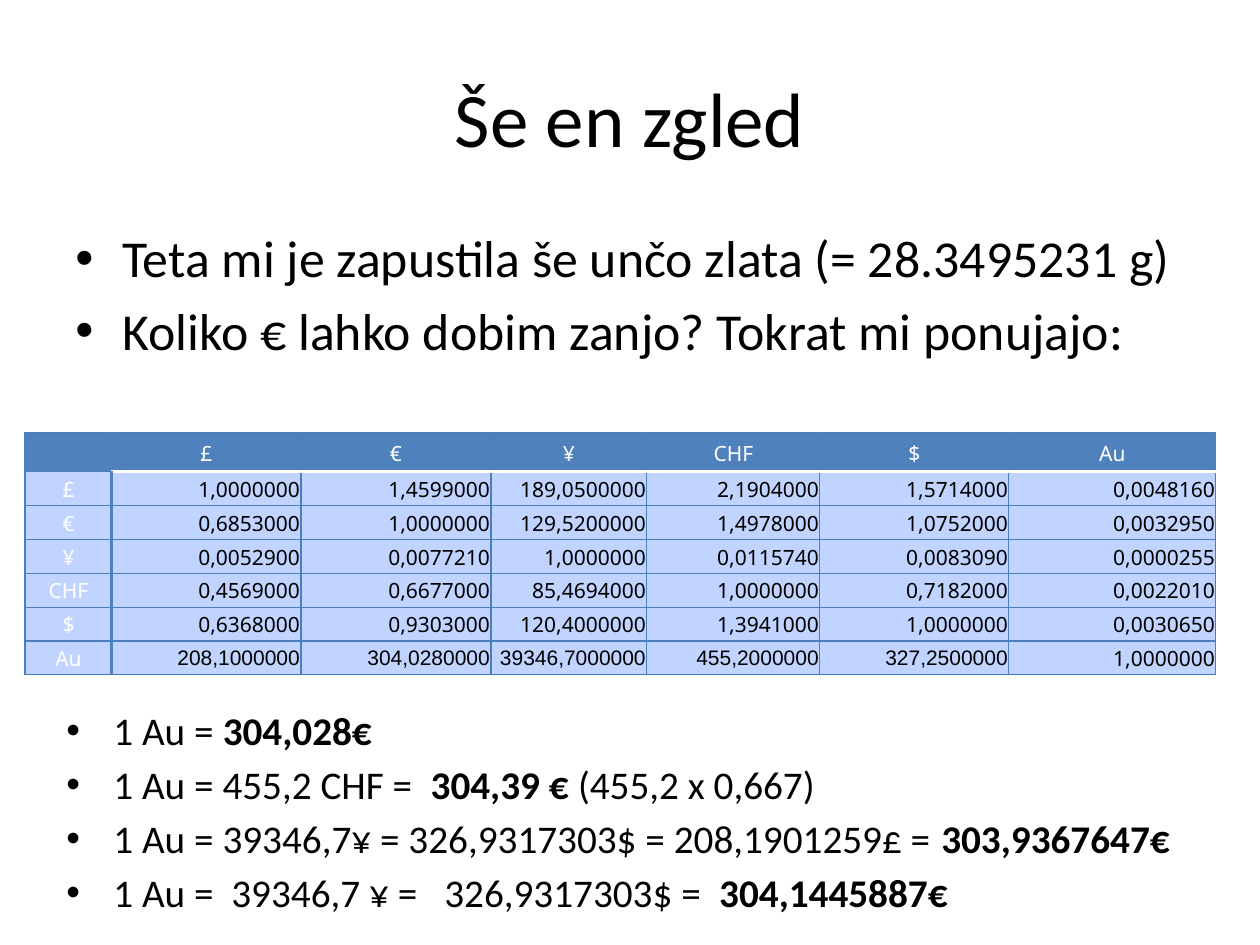
import pptx
import pptx.dml.color
import pptx.enum.text
import pptx.oxml.ns
import pptx.util
import lxml.etree

TITLE = "Še en zgled"
QUESTION = [
    [("Teta mi je zapustila še unčo zlata (= 28.3495231 g)", False)],
    [("Koliko € lahko dobim zanjo? Tokrat mi ponujajo:", False)],
]
CURRENCIES = ["£", "€", "¥", "CHF", "$", "Au"]
RATES = [
    ["1,0000000", "1,4599000", "189,0500000", "2,1904000", "1,5714000", "0,0048160"],
    ["0,6853000", "1,0000000", "129,5200000", "1,4978000", "1,0752000", "0,0032950"],
    ["0,0052900", "0,0077210", "1,0000000", "0,0115740", "0,0083090", "0,0000255"],
    ["0,4569000", "0,6677000", "85,4694000", "1,0000000", "0,7182000", "0,0022010"],
    ["0,6368000", "0,9303000", "120,4000000", "1,3941000", "1,0000000", "0,0030650"],
    ["208,1000000", "304,0280000", "39346,7000000", "455,2000000", "327,2500000", "1,0000000"],
]
CONVERSIONS = [
    [("1 Au = ", False), ("304,028€", True)],
    [("1 Au = 455,2 CHF =  ", False), ("304,39 € ", True), ("(455,2 x 0,667)", False)],
    [("1 Au = 39346,7¥ = 326,9317303$ = 208,1901259£ = ", False), ("303,9367647€", True)],
    [("1 Au =  39346,7 ¥ =\t326,9317303$ =", False), ("  304,1445887€", True)],
]
COLUMN_WIDTHS = [87, 189, 190, 156, 173, 189, 207]
TABLE_LEFT, TABLE_TOP, TABLE_HEIGHT = 25, 433, 237
BULLET_INDENT = 47

BLACK, WHITE = "000000", "FFFFFF"
HEADER_BLUE, BODY_BLUE, GRID_BLUE = "4F81BD", "C0D4FF", "4B7EBC"
THIN, THICK = 0.75, 2

ALIGN = pptx.enum.text.PP_ALIGN
MIDDLE = pptx.enum.text.MSO_ANCHOR.MIDDLE


def px(length):
    return pptx.util.Emu(round(length * 914400 / 126))


def rgb(color):
    return pptx.dml.color.RGBColor.from_string(color)


def add_child(parent, tag, **attributes):
    return lxml.etree.SubElement(parent, pptx.oxml.ns.qn(tag), attributes)


def add_run(para, text, size, font="Calibri", color=BLACK, bold=False):
    run = para.add_run()
    run.text = text
    run.font.size = pptx.util.Pt(size)
    run.font.name = font
    run.font.bold = bold
    run.font.color.rgb = rgb(color)


def add_text_frame(slide, left, top, width, height):
    frame = slide.shapes.add_textbox(px(left), px(top), px(width), px(height)).text_frame
    frame.word_wrap = True
    return frame


def add_bullets(slide, place, lines, size, gap):
    frame = add_text_frame(slide, *place)
    for index, runs in enumerate(lines):
        para = frame.add_paragraph() if index else frame.paragraphs[0]
        para.space_before = pptx.util.Pt(gap)
        properties = para._p.get_or_add_pPr()
        properties.set("marL", str(px(BULLET_INDENT)))
        properties.set("indent", str(-px(BULLET_INDENT)))
        add_child(properties, "a:buFont", typeface="Arial")
        add_child(properties, "a:buChar", char="•")
        for text, bold in runs:
            add_run(para, text, size, bold=bold)


def set_borders(cell, row, column):
    grid = (GRID_BLUE, THIN)
    label_edge = (HEADER_BLUE, THICK)
    header_edge = (WHITE, THICK) if column else grid
    borders = {
        "L": label_edge if row and column == 1 else grid,
        "R": label_edge if row and column == 0 else grid,
        "T": header_edge if row == 1 else grid,
        "B": header_edge if row == 0 else grid,
    }
    properties = cell._tc.get_or_add_tcPr()
    for side, (color, width) in borders.items():
        line = add_child(properties, "a:ln" + side, w=str(pptx.util.Pt(width)))
        add_child(add_child(line, "a:solidFill"), "a:srgbClr", val=color)


def add_rate_table(slide):
    rows = [[""] + CURRENCIES]
    rows += [[name] + rates for name, rates in zip(CURRENCIES, RATES)]
    table = slide.shapes.add_table(
        len(rows), len(COLUMN_WIDTHS), px(TABLE_LEFT), px(TABLE_TOP),
        px(sum(COLUMN_WIDTHS)), px(TABLE_HEIGHT)).table
    for column, width in zip(table.columns, COLUMN_WIDTHS):
        column.width = px(width)
    for row, values in enumerate(rows):
        table.rows[row].height = px(TABLE_HEIGHT / len(rows))
        for column, value in enumerate(values):
            cell = table.cell(row, column)
            is_label = row == 0 or column == 0
            set_borders(cell, row, column)
            cell.fill.solid()
            cell.fill.fore_color.rgb = rgb(BODY_BLUE if row else HEADER_BLUE)
            cell.vertical_anchor = MIDDLE
            cell.margin_left = cell.margin_right = cell.margin_top = px(1)
            cell.margin_bottom = 0
            para = cell.text_frame.paragraphs[0]
            para.alignment = ALIGN.CENTER if is_label else ALIGN.RIGHT
            gold_price = row == len(rows) - 1 and 0 < column < len(values) - 1
            if value:
                add_run(para, value, 12, "Arial" if gold_price else "Noto Sans",
                        WHITE if is_label else BLACK)


def main():
    deck = pptx.Presentation()
    deck.slide_width, deck.slide_height = px(1260), px(945)
    slide = deck.slides.add_slide(deck.slide_layouts[6])

    title = add_text_frame(slide, 63, 38, 1134, 157)
    title.vertical_anchor = MIDDLE
    title.paragraphs[0].alignment = ALIGN.CENTER
    add_run(title.paragraphs[0], TITLE, 44)

    add_bullets(slide, (63, 220, 1134, 183), QUESTION, 29.6, 6)
    add_rate_table(slide)
    add_bullets(slide, (54, 700, 1134, 213), CONVERSIONS, 22.4, 4)
    deck.save("out.pptx")


if __name__ == "__main__":
    main()
